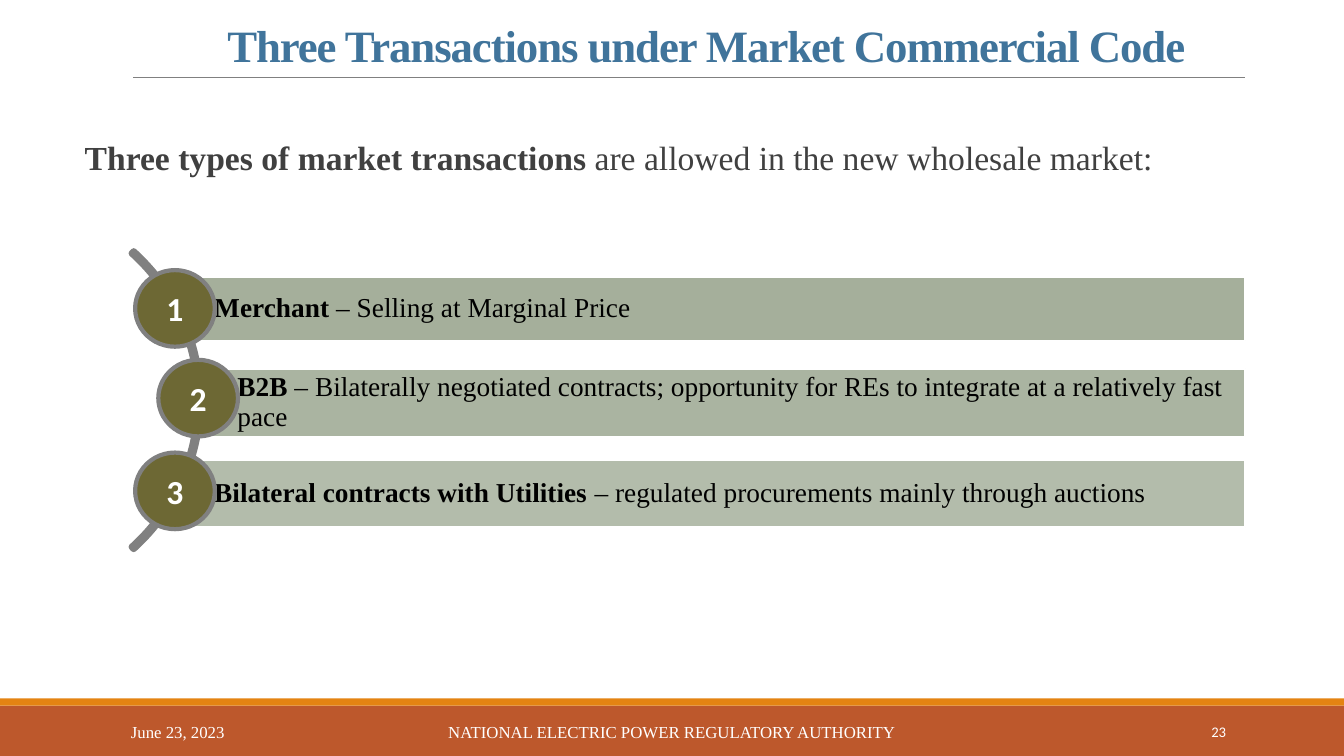
from lxml import etree
from pptx import Presentation
from pptx.dml.color import RGBColor
from pptx.enum.shapes import MSO_CONNECTOR, MSO_SHAPE
from pptx.enum.text import MSO_ANCHOR, MSO_AUTO_SIZE, PP_ALIGN
from pptx.oxml.ns import qn
from pptx.util import Inches, Pt

LEFT, CENTER, RIGHT = PP_ALIGN.LEFT, PP_ALIGN.CENTER, PP_ALIGN.RIGHT
TOP, MIDDLE = MSO_ANCHOR.TOP, MSO_ANCHOR.MIDDLE
RECTANGLE, OVAL, BLOCK_ARC = MSO_SHAPE.RECTANGLE, MSO_SHAPE.OVAL, MSO_SHAPE.BLOCK_ARC

WHITE = RGBColor(0xFF, 0xFF, 0xFF)
BLACK = RGBColor(0x00, 0x00, 0x00)
DARK_GRAY = RGBColor(0x40, 0x40, 0x40)
GRAY = RGBColor(0x80, 0x80, 0x80)
BLUE = RGBColor(0x40, 0x74, 0x9B)
RUST = RGBColor(0xBD, 0x58, 0x2C)
ORANGE = RGBColor(0xE4, 0x83, 0x12)
SAGE = RGBColor(0x94, 0xA0, 0x88)
PALE_SAGE = RGBColor(0xBF, 0xC6, 0xB8)
OLIVE = RGBColor(0x6D, 0x68, 0x34)
SERIF, SANS = "Times New Roman", "Calibri"

WIDTH, HEIGHT = 13.33, 7.5
RIGHT_EDGE = 12.35
CIRCLE_WIDTH, CIRCLE_HEIGHT = 0.79, 0.76

presentation = Presentation()
presentation.slide_width, presentation.slide_height = Inches(WIDTH), Inches(HEIGHT)
slide = presentation.slides.add_slide(presentation.slide_layouts[5])


def add_filled(kind, left, top, width, height, fill, line=None, line_width=0):
    shape = slide.shapes.add_shape(
        kind, Inches(left), Inches(top), Inches(width), Inches(height))
    shape.shadow.inherit = False
    shape.fill.solid()
    shape.fill.fore_color.rgb = fill
    if line is None:
        shape.line.fill.background()
    else:
        shape.line.color.rgb = line
        shape.line.width = Pt(line_width)
    return shape


def write(shape, parts, size, color, font=SERIF, align=LEFT, anchor=MIDDLE, margins=None):
    """Fill a shape with one paragraph of (text, bold) parts."""
    frame = shape.text_frame
    frame.word_wrap = True
    frame.auto_size = MSO_AUTO_SIZE.NONE
    frame.vertical_anchor = anchor
    if margins is not None:
        (frame.margin_left, frame.margin_top,
         frame.margin_right, frame.margin_bottom) = [Inches(m) for m in margins]
    paragraph = frame.paragraphs[0]
    paragraph.alignment = align
    paragraph.font.size = Pt(size)
    paragraph.font.name = font
    paragraph.font.color.rgb = color
    for text, bold in parts:
        run = paragraph.add_run()
        run.text = text
        run.font.bold = bold
    return paragraph


# Footer bands
add_filled(RECTANGLE, 0, 7, WIDTH, 0.5, RUST)
add_filled(RECTANGLE, 0, 6.93, WIDTH, 0.07, ORANGE)

# Title and its rule
title = slide.shapes.title
title.left, title.top = Inches(1.99), Inches(0.13)
title.width, title.height = Inches(10.03), Inches(0.64)
paragraph = write(title, [("Three Transactions under Market Commercial Code", True)],
                  32, BLUE, align=CENTER, anchor=TOP)
paragraph.runs[0].font._element.set("spc", "-80")

rule = slide.shapes.add_connector(
    MSO_CONNECTOR.STRAIGHT, Inches(1.32), Inches(0.77), Inches(RIGHT_EDGE), Inches(0.77))
rule.line.color.rgb = GRAY
rule.line.width = Pt(0.75)
etree.SubElement(rule._element.spPr, qn("a:effectLst"))

# Footer texts: left, width, text, size, font, alignment
footers = [
    (1.2, 2.7, "June 23, 2023", 12, SERIF, LEFT),
    (4.03, 5.27, "NATIONAL ELECTRIC POWER REGULATORY AUTHORITY", 12, SERIF, CENTER),
    (10.83, 1.43, "23", 10.5, SANS, RIGHT),
]
for left, width, text, size, font, align in footers:
    box = slide.shapes.add_textbox(Inches(left), Inches(7.06), Inches(width), Inches(0.4))
    write(box, [(text, False)], size, WHITE, font, align)

# Introduction
introduction = slide.shapes.add_textbox(Inches(0.34), Inches(1.36), Inches(12.24), Inches(0.34))
write(introduction,
      [("Three types of market transactions ", True),
       ("are allowed in the new wholesale market:", False)],
      24, DARK_GRAY, anchor=TOP, margins=(0.5, 0, 0, 0))

# Arc behind the list
arc = add_filled(BLOCK_ARC, -2.29, 1.93, 4.28, 4.08, PALE_SAGE, GRAY, 4.5)
for index, value in enumerate((189, 27, 0.007)):
    arc.adjustments[index] = value

# Transactions: circle left and top, bar top and height, opacity in percent, text
transactions = [
    (1.34, 2.68, 2.75, 0.63, 84, "Merchant ", "– Selling at Marginal Price"),
    (1.57, 3.57, 3.66, 0.67, 79, "B2B ",
     "– Bilaterally negotiated contracts; opportunity for REs to integrate "
     "at a relatively fast pace"),
    (1.34, 4.49, 4.57, 0.66, 70, "Bilateral contracts with Utilities",
     " – regulated procurements mainly through auctions"),
]
for number, (left, top, bar_top, bar_height, opacity, name, detail) in enumerate(transactions, 1):
    bar_left = left + CIRCLE_WIDTH / 2
    bar = add_filled(RECTANGLE, bar_left, bar_top, RIGHT_EDGE - bar_left, bar_height,
                     SAGE, WHITE, 1.25)
    fill_color = bar._element.spPr.find(qn("a:solidFill"))[0]
    etree.SubElement(fill_color, qn("a:alpha"), val=str(opacity * 1000))
    paragraph = write(bar, [(name, True), (detail, False)], 19.5, BLACK,
                      margins=(0.39, 0.04, 0.04, 0.04))
    paragraph.line_spacing = 0.9

    circle = add_filled(OVAL, left, top, CIRCLE_WIDTH, CIRCLE_HEIGHT, OLIVE, GRAY, 3)
    write(circle, [(str(number), True)], 24, WHITE, SANS, CENTER, margins=(0, 0, 0, 0))

presentation.save("out.pptx")
